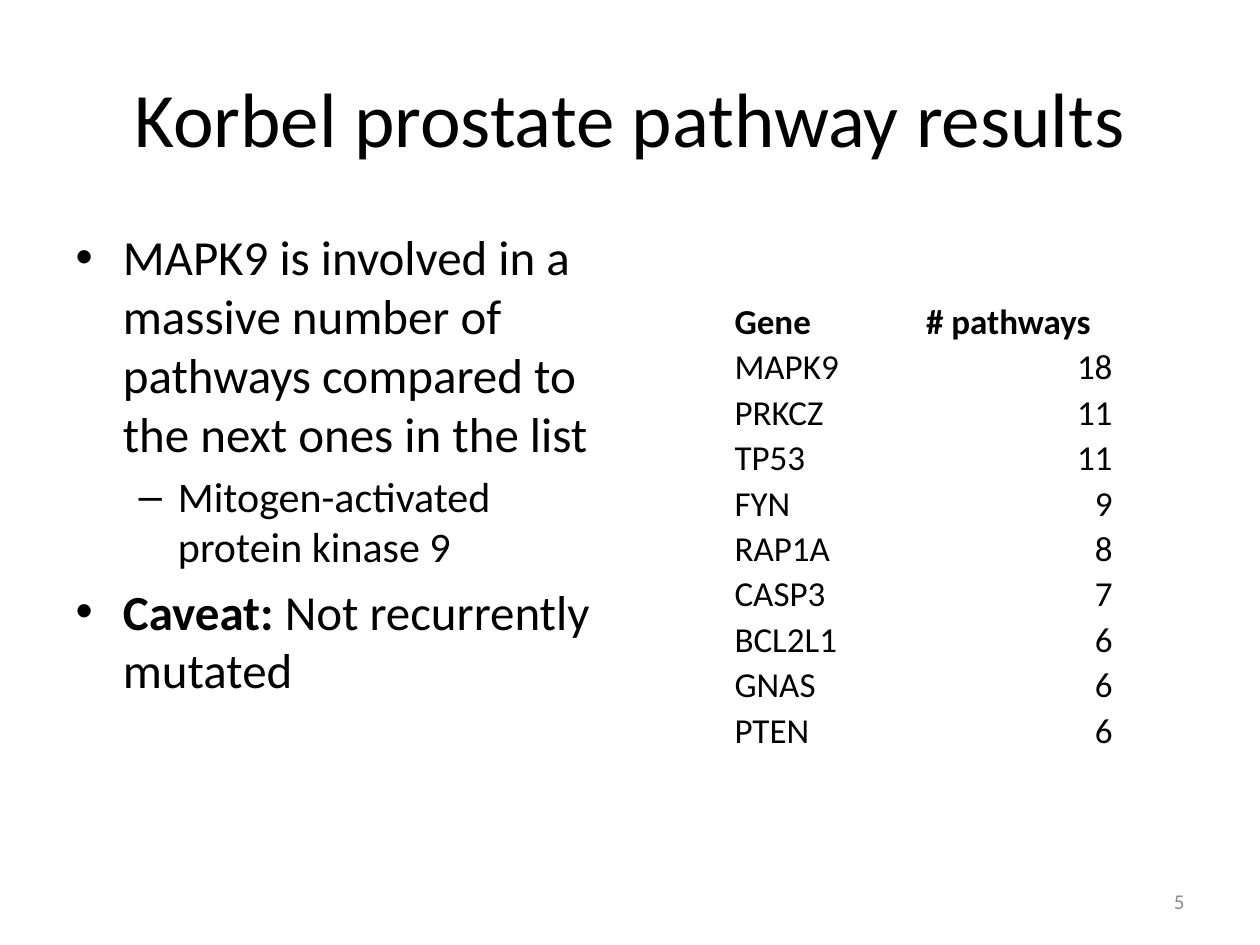
from pptx import Presentation
from pptx.dml.color import RGBColor
from pptx.enum.text import MSO_ANCHOR, MSO_AUTO_SIZE, PP_ALIGN
from pptx.util import Inches, Pt

# Content
TITLE = "Korbel prostate pathway results"
# Each bullet: level, then runs of (text, bold)
BULLETS = [
    (0, [("MAPK9 is involved in a massive number of pathways "
          "compared to the next ones in the list", False)]),
    (1, [("Mitogen-activated protein kinase 9", False)]),
    (0, [("Caveat: ", True), ("Not recurrently mutated", False)]),
]
BULLET_SIZES = [28, 24]
HEADER = ("Gene", "# pathways")
PATHWAY_COUNTS = [
    ("MAPK9", 18), ("PRKCZ", 11), ("TP53", 11), ("FYN", 9), ("RAP1A", 8),
    ("CASP3", 7), ("BCL2L1", 6), ("GNAS", 6), ("PTEN", 6),
]
SLIDE_NUMBER = "5"

# Layout in inches
COLUMN_WIDTH, ROW_HEIGHT = 1.52, 0.36
TABLE_LEFT, TABLE_TOP = 5.81, 2.37


def add_text(paragraph, text, size, color="000000", bold=False, align=None):
    run = paragraph.add_run()
    run.text = text
    run.font.name = "Calibri"
    run.font.size = Pt(size)
    run.font.bold = bold
    run.font.color.rgb = RGBColor.from_string(color)
    if align is not None:
        paragraph.alignment = align


def place(shape, left, top, width, height):
    shape.left, shape.top = Inches(left), Inches(top)
    shape.width, shape.height = Inches(width), Inches(height)


def add_bullets(text_frame):
    text_frame.auto_size = MSO_AUTO_SIZE.NONE
    for index, (level, runs) in enumerate(BULLETS):
        paragraph = text_frame.paragraphs[0] if index == 0 else text_frame.add_paragraph()
        paragraph.level = level
        for text, bold in runs:
            add_text(paragraph, text, BULLET_SIZES[level], bold=bold)


def add_pathway_table(slide):
    rows = [HEADER] + PATHWAY_COUNTS
    table = slide.shapes.add_table(
        len(rows), len(HEADER), Inches(TABLE_LEFT), Inches(TABLE_TOP),
        Inches(COLUMN_WIDTH * len(HEADER)), Inches(ROW_HEIGHT * len(rows))).table
    table.first_row = False
    table.horz_banding = False
    for row_index, values in enumerate(rows):
        for column_index, value in enumerate(values):
            cell = table.cell(row_index, column_index)
            cell.fill.background()
            cell.vertical_anchor = MSO_ANCHOR.BOTTOM
            cell.margin_left = cell.margin_right = cell.margin_top = Inches(0.02)
            cell.margin_bottom = 0
            is_number = isinstance(value, int)
            add_text(cell.text_frame.paragraphs[0], str(value), 20, bold=row_index == 0,
                     align=PP_ALIGN.RIGHT if is_number else PP_ALIGN.LEFT)


def main():
    presentation = Presentation()
    presentation.slide_width, presentation.slide_height = Inches(10), Inches(7.5)
    slide = presentation.slides.add_slide(presentation.slide_layouts[1])

    # Title
    title = slide.shapes.title
    place(title, 0.5, 0.3, 9, 1.25)
    title.text_frame.vertical_anchor = MSO_ANCHOR.MIDDLE
    add_text(title.text_frame.paragraphs[0], TITLE, 44, align=PP_ALIGN.CENTER)

    # Bullets
    body = slide.placeholders[1]
    place(body, 0.5, 1.75, 4.42, 4.95)
    add_bullets(body.text_frame)

    # Table
    add_pathway_table(slide)

    # Slide number
    number_box = slide.shapes.add_textbox(Inches(7.17), Inches(6.95), Inches(2.33), Inches(0.4))
    number_box.text_frame.word_wrap = True
    number_box.text_frame.vertical_anchor = MSO_ANCHOR.MIDDLE
    add_text(number_box.text_frame.paragraphs[0], SLIDE_NUMBER, 12, color="8C8C8C",
             align=PP_ALIGN.RIGHT)

    presentation.save("out.pptx")


if __name__ == "__main__":
    main()
